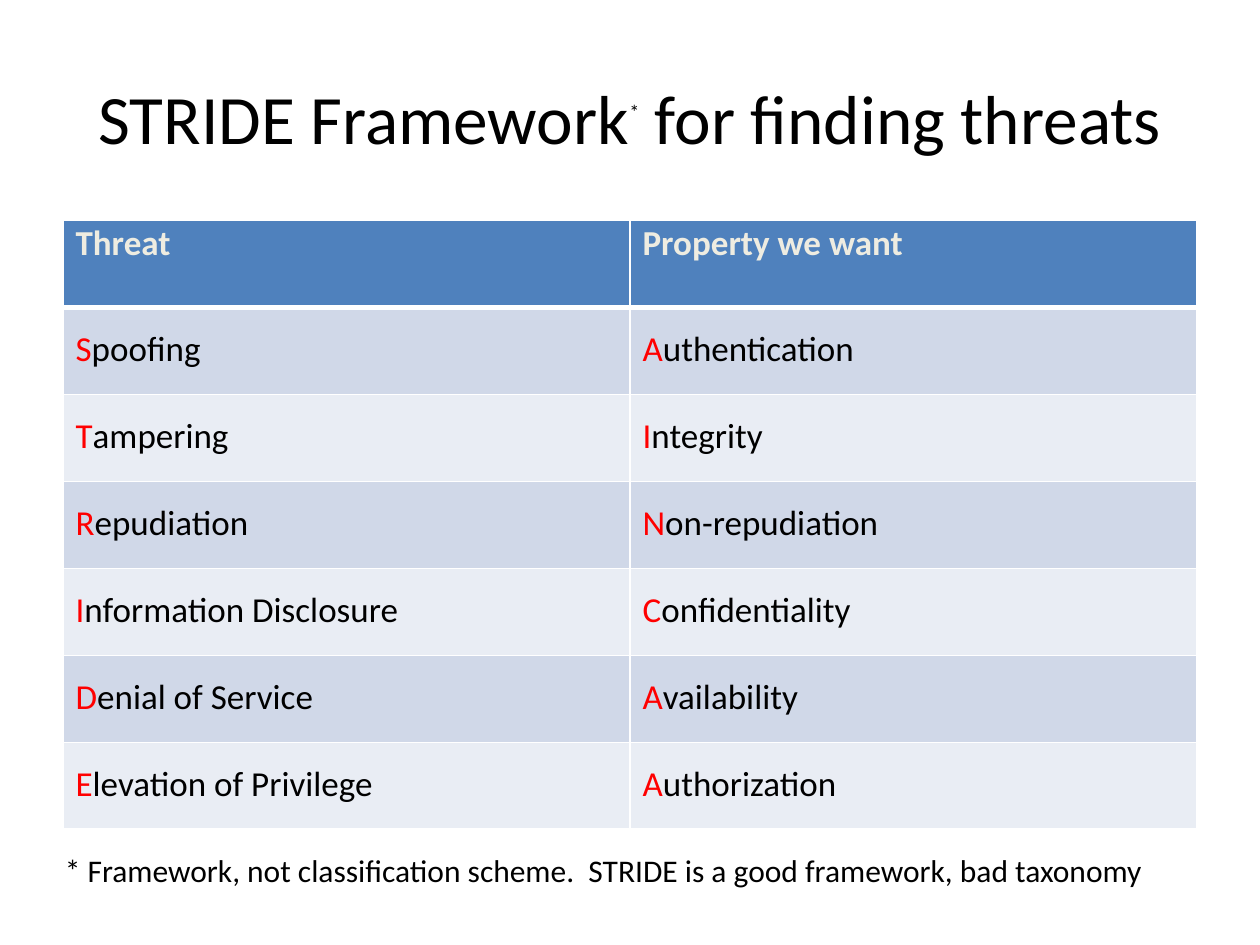
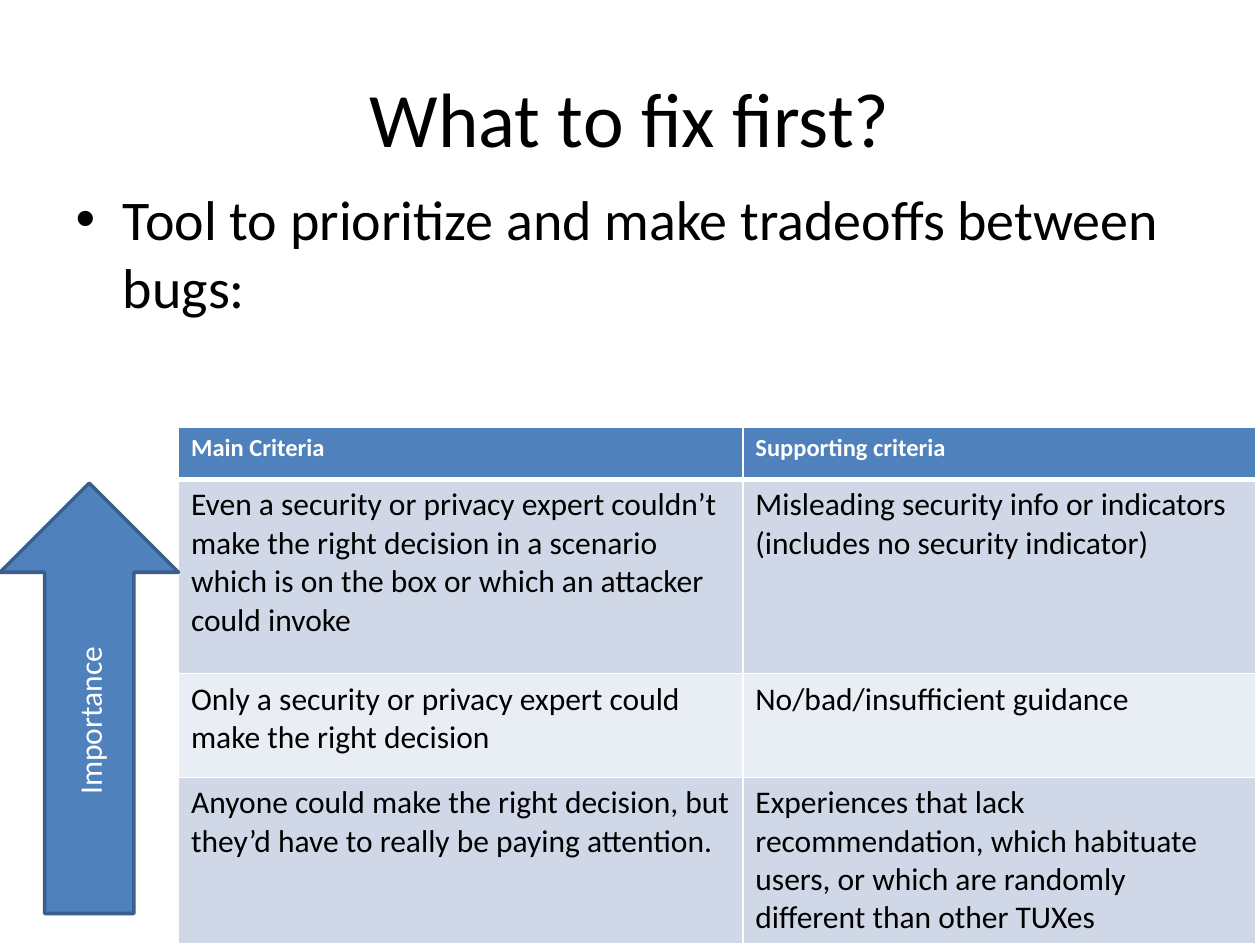
"""Build two slides on finding and ranking security threats."""
from dataclasses import dataclass
from typing import Optional

from lxml.etree import SubElement
from pptx import Presentation
from pptx.dml.color import RGBColor
from pptx.enum.shapes import MSO_SHAPE
from pptx.enum.text import MSO_ANCHOR, PP_ALIGN
from pptx.oxml.ns import qn
from pptx.presentation import Presentation as Deck
from pptx.slide import Slide
from pptx.table import _Cell as Cell
from pptx.text.text import _Paragraph as Para
from pptx.util import Pt

BLACK = RGBColor(0x00, 0x00, 0x00)
WHITE = RGBColor(0xFF, 0xFF, 0xFF)
CREAM = RGBColor(0xEE, 0xEC, 0xE1)
RED = RGBColor(0xFF, 0x00, 0x00)
BLUE = RGBColor(0x4F, 0x81, 0xBD)
NAVY = RGBColor(0x3A, 0x5F, 0x8C)
DARK = RGBColor(0xD0, 0xD8, 0xE8)
LIGHT = RGBColor(0xE9, 0xED, 0xF4)
FONT = "Calibri"


@dataclass(frozen=True)
class Box:
    left: float
    top: float
    width: float
    height: float

    def edges(self) -> tuple:
        return Pt(self.left), Pt(self.top), Pt(self.width), Pt(self.height)


@dataclass(frozen=True)
class Grid:
    box: Box
    widths: tuple
    heights: tuple
    rows: tuple
    size: float
    head_size: float
    head_color: RGBColor
    anchor: MSO_ANCHOR = MSO_ANCHOR.TOP
    spacing: float = 1.0
    initial: Optional[RGBColor] = None


TITLE = Box(36, 21.6, 648, 90)
THREATS = Grid(
    box=Box(36, 126, 648, 347.9),
    widths=(324, 324),
    heights=(49.7,) * 7,
    rows=(
        ("Threat", "Property we want"),
        ("Spoofing", "Authentication"),
        ("Tampering", "Integrity"),
        ("Repudiation", "Non-repudiation"),
        ("Information Disclosure", "Confidentiality"),
        ("Denial of Service", "Availability"),
        ("Elevation of Privilege", "Authorization"),
    ),
    size=20, head_size=20, head_color=CREAM,
    anchor=MSO_ANCHOR.MIDDLE, spacing=0.85, initial=RED,
)
CRITERIA = Grid(
    box=Box(102, 244, 615.6, 293.8),
    widths=(322.5, 293.1),
    heights=(30, 111, 59.2, 93.6),
    rows=(
        ("Main Criteria", "Supporting criteria"),
        ("Even a security or privacy expert couldn’t make the right decision "
         "in a scenario which is on the box or which an attacker could invoke",
         "Misleading security info or indicators "
         "(includes no security indicator)"),
        ("Only a security or privacy expert could make the right decision",
         "No/bad/insufficient guidance"),
        ("Anyone could make the right decision, but they’d have to really be "
         "paying attention.",
         "Experiences that lack recommendation, which habituate users, "
         "or which are randomly different than other TUXes"),
    ),
    size=18, head_size=14, head_color=WHITE,
)


def write(para: Para, text: str, *, size: float = 18, color: RGBColor = BLACK,
          bold: bool = False, raised: int = 0) -> None:
    run = para.add_run()
    run.text = text
    run.font.name = FONT
    run.font.size = Pt(size)
    run.font.bold = bold
    run.font.color.rgb = color
    if raised:
        run.font._element.set("baseline", str(raised * 1000))


def place(shape, box: Box) -> Para:
    shape.left, shape.top, shape.width, shape.height = box.edges()
    return shape.text_frame.paragraphs[0]


def start(deck: Deck, layout: int) -> tuple[Slide, Para]:
    slide = deck.slides.add_slide(deck.slide_layouts[layout])
    para = place(slide.shapes.title, TITLE)
    para.alignment = PP_ALIGN.CENTER
    slide.shapes.title.text_frame.vertical_anchor = MSO_ANCHOR.MIDDLE
    return slide, para


def border(cell: Cell, top: float, bottom: float) -> None:
    props = cell._tc.get_or_add_tcPr()
    for side, width in (("L", 1), ("R", 1), ("T", top), ("B", bottom)):
        line = SubElement(props, qn(f"a:ln{side}"), w=str(Pt(width)))
        fill = SubElement(line, qn("a:solidFill"))
        SubElement(fill, qn("a:srgbClr"), val=str(WHITE))


def fill_cell(cell: Cell, text: str, row: int, grid: Grid) -> None:
    head = row == 0
    border(cell, 3 if row == 1 else 1, 3 if head else 1)
    cell.fill.solid()
    cell.fill.fore_color.rgb = BLUE if head else (LIGHT, DARK)[row % 2]
    cell.vertical_anchor = MSO_ANCHOR.TOP if head else grid.anchor
    para = cell.text_frame.paragraphs[0]
    para.line_spacing = grid.spacing
    if head:
        write(para, text, size=grid.head_size, color=grid.head_color, bold=True)
    elif grid.initial:
        write(para, text[0], size=grid.size, color=grid.initial)
        write(para, text[1:], size=grid.size)
    else:
        write(para, text, size=grid.size)


def draw_grid(slide: Slide, grid: Grid) -> None:
    table = slide.shapes.add_table(
        len(grid.rows), len(grid.widths), *grid.box.edges()).table
    for column, width in zip(table.columns, grid.widths):
        column.width = Pt(width)
    for row, height in zip(table.rows, grid.heights):
        row.height = Pt(height)
    for i, texts in enumerate(grid.rows):
        for j, text in enumerate(texts):
            fill_cell(table.cell(i, j), text, i, grid)


def draw_arrow(slide: Slide, box: Box, text: str) -> None:
    arrow = slide.shapes.add_shape(MSO_SHAPE.DOWN_ARROW, *box.edges())
    arrow.rotation = 180
    arrow.shadow.inherit = False
    arrow.fill.solid()
    arrow.fill.fore_color.rgb = BLUE
    arrow.line.color.rgb = NAVY
    arrow.line.width = Pt(2)
    frame = arrow.text_frame
    frame.vertical_anchor = MSO_ANCHOR.MIDDLE
    frame._txBody.bodyPr.set("vert", "vert")
    para = frame.paragraphs[0]
    para.alignment = PP_ALIGN.CENTER
    write(para, text, color=WHITE)


def add_threats(deck: Deck) -> None:
    slide, title = start(deck, 5)
    write(title, "STRIDE Framework", size=39.6)
    write(title, "*", size=19.8, raised=70)
    write(title, " for finding threats", size=39.6)
    draw_grid(slide, THREATS)
    note = slide.shapes.add_textbox(*Box(30, 483, 654, 29).edges())
    note.text_frame.word_wrap = True
    write(note.text_frame.paragraphs[0],
          "* Framework, not classification scheme.  "
          "STRIDE is a good framework, bad taxonomy")


def add_fixes(deck: Deck) -> None:
    slide, title = start(deck, 1)
    write(title, "What to fix first?", size=44)
    body = place(slide.placeholders[1], Box(36, 102, 648, 108))
    write(body, "Tool to prioritize and make tradeoffs between bugs:", size=32)
    draw_grid(slide, CRITERIA)
    draw_arrow(slide, Box(0, 276, 102, 246), "Importance")


def main() -> None:
    deck = Presentation()
    deck.slide_width, deck.slide_height = Pt(720), Pt(540)
    add_threats(deck)
    add_fixes(deck)
    deck.save("out.pptx")


if __name__ == "__main__":
    main()
